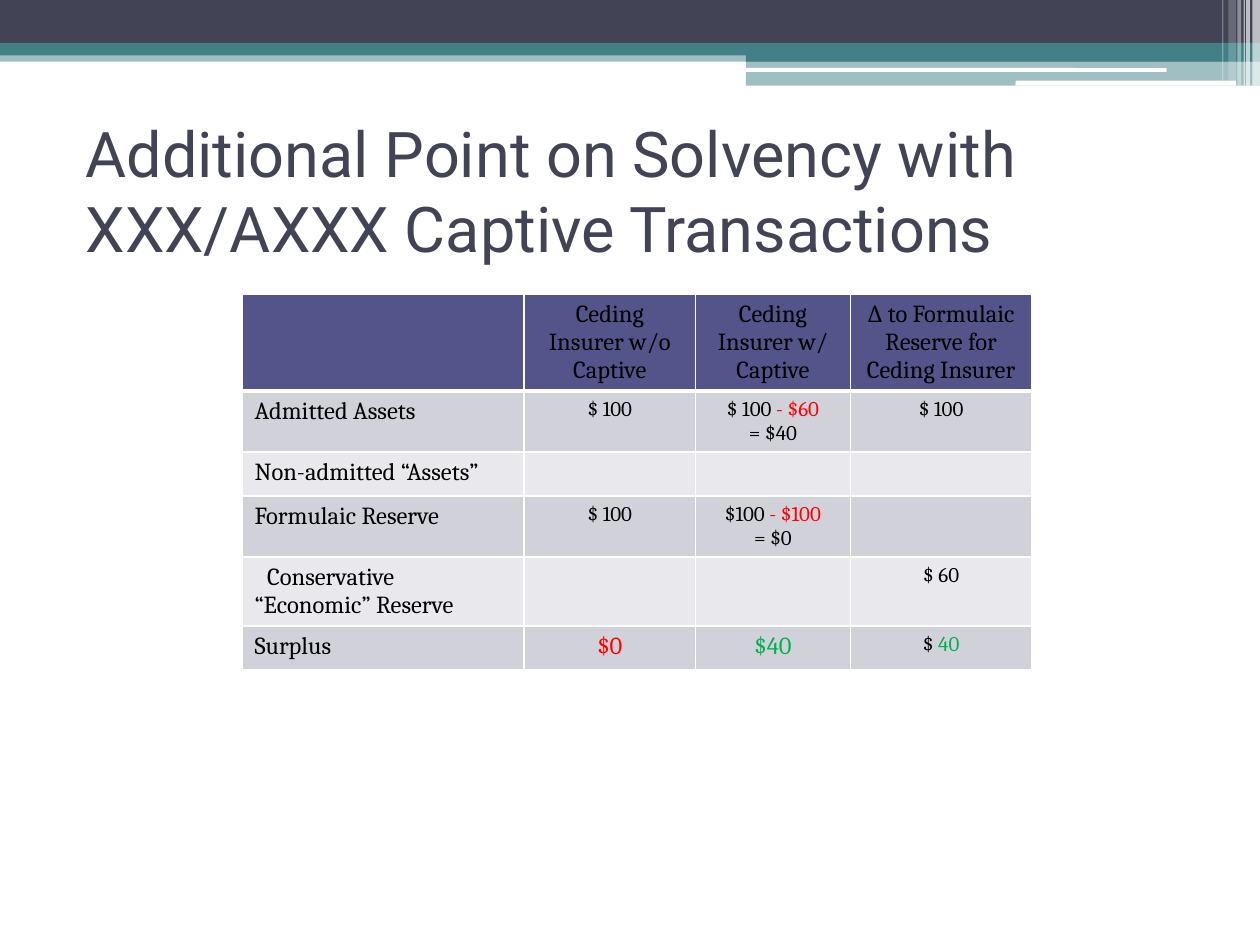
from dataclasses import dataclass

from lxml import etree
from pptx import Presentation, util as u
from pptx.dml.color import RGBColor
from pptx.enum import shapes, text
from pptx.oxml import ns

WHITE = RGBColor(0xFF, 0xFF, 0xFF)
BLACK = RGBColor(0x00, 0x00, 0x00)
SLATE = RGBColor(0x42, 0x44, 0x56)
TEAL = RGBColor(0x43, 0x80, 0x86)
INDIGO = RGBColor(0x53, 0x54, 0x8A)
ROW_FILLS = (RGBColor(0xD1, 0xD1, 0xDA), RGBColor(0xE9, 0xE9, 0xED))
RED = RGBColor(0xFF, 0x00, 0x00)
GREEN = RGBColor(0x00, 0xB0, 0x50)

SLIDE_WIDTH, SLIDE_HEIGHT = u.Inches(10), u.Inches(7.5)
TITLE_FONT, TABLE_FONT = "Roboto", "Cambria"


@dataclass(frozen=True)
class Bar:
    """A decoration; lengths are percentages of the slide's size."""
    left: float
    top: float
    width: float
    height: float
    color: RGBColor
    opacity: int = 100
    rounded: bool = False


@dataclass(frozen=True)
class Part:
    """A stretch of cell text in one format."""
    words: str
    color: RGBColor = BLACK
    size: int = 14


@dataclass(frozen=True)
class Entry:
    """A table cell's paragraphs, each a tuple of parts."""
    paragraphs: tuple[tuple[Part, ...], ...] = ()
    indent: float = 0


def entry(*parts: Part) -> Entry:
    return Entry((parts,))


def amount(words: str, color: RGBColor = BLACK) -> Part:
    return Part(words, color, 12)


def reduced(start: str, cut: str, result: str) -> Entry:
    """An amount, the red deduction from it, and the result below."""
    return Entry(((amount(start), amount(cut, RED)), (amount(result),)))


HEADER_BARS = [
    Bar(0, 5.33, 100, 1.2, TEAL, 50),
    Bar(0, 0, 100, 4.53, SLATE),
    Bar(0, 4.53, 100, 1.33, TEAL),
    Bar(59.2, 5.2, 40.8, 1.33, TEAL),
    Bar(59.2, 6.4, 40.8, 2.67, TEAL, 50),
    Bar(59.1, 7.2, 33.5, 0.4, WHITE, rounded=True),
    Bar(80.6, 8.53, 17.5, 0.53, WHITE, rounded=True),
]
# left, width, height, opacity
CORNER_STRIPES = [
    (99.4, 0.6, 9.07, 65), (98.9, 0.3, 9.07, 65), (98.7, 0.1, 9.07, 60),
    (98.2, 0.3, 9.07, 40), (97.5, 0.6, 8.53, 20), (97, 0.1, 8.53, 30),
]
EMPTY = Entry()
TABLE_ROWS = [
    [EMPTY, entry(Part("Ceding Insurer w/o Captive")),
     entry(Part("Ceding Insurer w/ Captive")),
     entry(Part("∆ to Formulaic Reserve for Ceding Insurer"))],
    [entry(Part("Admitted Assets")), entry(amount("$ 100")),
     reduced("$ 100 ", "- $60", "= $40"), entry(amount("$ 100"))],
    [entry(Part("Non-admitted “Assets”")), EMPTY, EMPTY, EMPTY],
    [entry(Part("Formulaic Reserve")), entry(amount("$ 100")),
     reduced("$100 ", "- $100", "= $0"), EMPTY],
    [Entry(((Part("Conservative “Economic” Reserve"),),), indent=0.1),
     EMPTY, EMPTY, entry(amount("$ 60"))],
    [entry(Part("Surplus")), entry(Part("$0", RED)), entry(Part("$40", GREEN)),
     entry(amount("$ "), amount("40", GREEN))],
]
COLUMN_SHARES = (22.4, 13.6, 12.3, 14.4)
ROW_SHARES = (8.93, 5.33, 4.67, 5.33, 4.4, 4.67)


def across(percent: float) -> int:
    return round(SLIDE_WIDTH * percent / 100)


def down(percent: float) -> int:
    return round(SLIDE_HEIGHT * percent / 100)


def draw_bar(slide, bar: Bar) -> None:
    kind = (shapes.MSO_SHAPE.ROUNDED_RECTANGLE if bar.rounded
            else shapes.MSO_SHAPE.RECTANGLE)
    shape = slide.shapes.add_shape(kind, across(bar.left), down(bar.top),
                                   across(bar.width), down(bar.height))
    shape.shadow.inherit = False
    shape.line.fill.background()
    shape.fill.solid()
    shape.fill.fore_color.rgb = bar.color
    if bar.opacity < 100:
        color = shape.fill._xPr.find(".//" + ns.qn("a:srgbClr"))
        etree.SubElement(color, ns.qn("a:alpha"), val=str(bar.opacity * 1000))


def write_title(slide, words: str) -> None:
    title = slide.shapes.title
    title.left, title.top = across(5.8), down(12.27)
    title.width, title.height = across(90), down(15.6)
    frame = title.text_frame
    frame.text = words
    frame.word_wrap = True
    frame.auto_size = text.MSO_AUTO_SIZE.NONE
    frame.vertical_anchor = text.MSO_ANCHOR.MIDDLE
    paragraph = frame.paragraphs[0]
    paragraph.alignment = text.PP_ALIGN.LEFT
    font = paragraph.runs[0].font
    font.name, font.size, font.color.rgb = TITLE_FONT, u.Pt(36), SLATE


def set_borders(cell, bottom_points: int) -> None:
    properties = cell._tc.get_or_add_tcPr()
    widths = {"lnL": 1, "lnR": 1, "lnT": 1, "lnB": bottom_points}
    for position, (side, points) in enumerate(widths.items()):
        line = etree.Element(ns.qn(f"a:{side}"), w=str(u.Pt(points)))
        fill = etree.SubElement(line, ns.qn("a:solidFill"))
        etree.SubElement(fill, ns.qn("a:srgbClr"), val=str(WHITE))
        properties.insert(position, line)


def fill_cell(cell, content: Entry, fill: RGBColor, centered: bool) -> None:
    cell.fill.solid()
    cell.fill.fore_color.rgb = fill
    frame = cell.text_frame
    if not content.paragraphs:
        # An empty cell's text size still sets its row's least height.
        frame.paragraphs[0]._p.get_or_add_endParaRPr().set("sz", "1400")
    for index, parts in enumerate(content.paragraphs):
        paragraph = frame.add_paragraph() if index else frame.paragraphs[0]
        paragraph.alignment = (text.PP_ALIGN.CENTER if centered
                               else text.PP_ALIGN.LEFT)
        if content.indent:
            paragraph._p.get_or_add_pPr().set(
                "indent", str(u.Inches(content.indent)))
        for part in parts:
            run = paragraph.add_run()
            run.text = part.words
            font = run.font
            font.name, font.size, font.bold = TABLE_FONT, u.Pt(part.size), False
            font.color.rgb = part.color


def draw_table(slide) -> None:
    table = slide.shapes.add_table(
        len(ROW_SHARES), len(COLUMN_SHARES), across(19.2), down(31.1),
        across(sum(COLUMN_SHARES)), down(sum(ROW_SHARES))).table
    for column, share in zip(table.columns, COLUMN_SHARES):
        column.width = across(share)
    for row, share in zip(table.rows, ROW_SHARES):
        row.height = down(share)
    for row_index, entries in enumerate(TABLE_ROWS):
        is_header = row_index == 0
        fill = INDIGO if is_header else ROW_FILLS[(row_index - 1) % 2]
        for column_index, content in enumerate(entries):
            cell = table.cell(row_index, column_index)
            fill_cell(cell, content, fill, centered=column_index > 0)
            set_borders(cell, bottom_points=3 if is_header else 1)


def main() -> None:
    presentation = Presentation()
    presentation.slide_width = SLIDE_WIDTH
    presentation.slide_height = SLIDE_HEIGHT
    slide = presentation.slides.add_slide(
        presentation.slide_layouts.get_by_name("Title Only"))
    for bar in HEADER_BARS:
        draw_bar(slide, bar)
    for left, width, height, opacity in CORNER_STRIPES:
        draw_bar(slide, Bar(left, 0, width, height, WHITE, opacity))
    write_title(slide, "Additional Point on Solvency with XXX/AXXX Captive Transactions")
    draw_table(slide)
    presentation.save("out.pptx")


if __name__ == "__main__":
    main()
